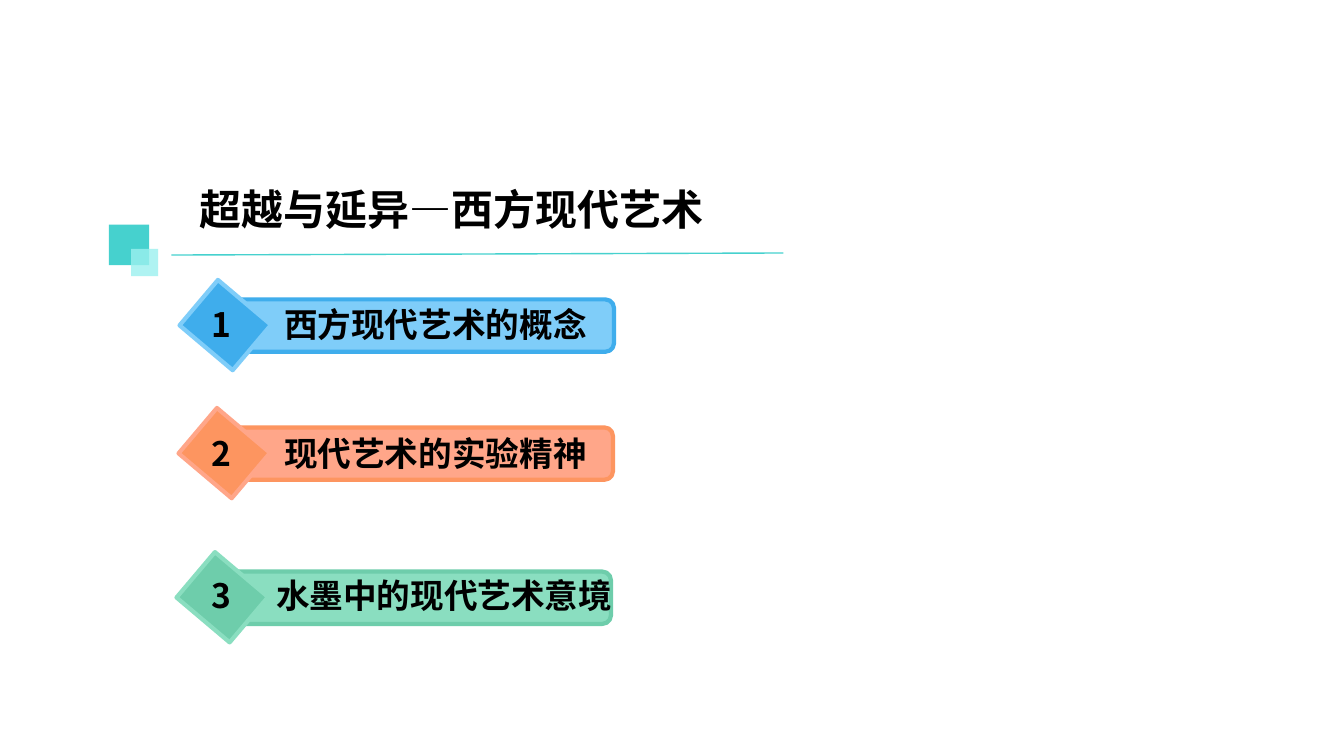
"""Build the agenda slide on modern Western art."""
from dataclasses import dataclass

from lxml import etree
from pptx import Presentation
from pptx import util as u
from pptx.dml.color import RGBColor
from pptx.enum import shapes, text
from pptx.oxml.ns import qn


@dataclass(frozen=True)
class Theme:
    font: str = "Noto Sans CJK SC"
    ink: str = "000000"
    teal: str = "46D1CE"
    pale: str = "9BF1EF"
    blue: tuple = ("7FCDF9", "3FADEC")
    coral: tuple = ("FFA689", "FD9560")
    green: tuple = ("8ADEC0", "6ECDAB")
    head: int = 30
    body: int = 24
    thin: int = 1
    edge: int = 3


class Deck:
    def __init__(self, theme):
        self.theme = theme
        self.prs = Presentation()
        self.prs.slide_width = u.Inches(13.33)
        self.prs.slide_height = u.Inches(7.5)
        self.slide = self.prs.slides.add_slide(self.prs.slide_layouts[5])

    def place(self, item, box):
        item.left, item.top, item.width, item.height = map(u.Inches, box)

    def letter(self, frame, words, size, tab=None):
        frame.word_wrap = True
        frame.auto_size = text.MSO_AUTO_SIZE.NONE
        frame.vertical_anchor = text.MSO_ANCHOR.TOP
        frame.text = words
        para = frame.paragraphs[0]
        para.alignment = text.PP_ALIGN.LEFT
        if tab:
            tabs = etree.SubElement(para._p.get_or_add_pPr(), qn("a:tabLst"))
            etree.SubElement(tabs, qn("a:tab"), pos=str(u.Inches(tab)), algn="l")
        for run in para.runs:
            font = run.font
            font.name, font.size, font.bold = self.theme.font, u.Pt(size), True
            font.color.rgb = RGBColor.from_string(self.theme.ink)
            east = etree.Element(qn("a:ea"), typeface=self.theme.font)
            font._element.find(qn("a:latin")).addnext(east)

    def title(self, words, box):
        item = self.slide.shapes.title
        self.place(item, box)
        self.letter(item.text_frame, words, self.theme.head)

    def label(self, words, box, tab):
        item = self.slide.shapes.add_textbox(*map(u.Inches, box))
        self.letter(item.text_frame, words, self.theme.body, tab)

    def block(self, group, kind, box, fill, line=None, alpha=None, turn=0):
        item = group.shapes.add_shape(kind, *map(u.Inches, box))
        item.shadow.inherit = False
        item.rotation = turn
        item.fill.solid()
        item.fill.fore_color.rgb = RGBColor.from_string(fill)
        if alpha:
            color = item._element.spPr.find(".//" + qn("a:srgbClr"))
            etree.SubElement(color, qn("a:alpha"), val=str(alpha * 1000))
        if line:
            item.line.color.rgb = RGBColor.from_string(line)
            item.line.width = u.Pt(self.theme.edge)
        else:
            item.line.fill.background()

    def rule(self, start, end):
        line = self.slide.shapes.add_connector(
            shapes.MSO_CONNECTOR.STRAIGHT, *map(u.Inches, start + end))
        line.line.color.rgb = RGBColor.from_string(self.theme.teal)
        line.line.width = u.Pt(self.theme.thin)
        etree.SubElement(line._element.spPr, qn("a:effectLst"))

    def mark(self):
        group = self.slide.shapes.add_group_shape()
        kind = shapes.MSO_SHAPE.RECTANGLE
        self.block(group, kind, (1.08, 2.23, 0.4, 0.4), self.theme.teal)
        self.block(group, kind, (1.3, 2.47, 0.27, 0.27), self.theme.pale, alpha=80)

    def entry(self, words, left, top, base, pair, tab):
        light, dark = pair
        group = self.slide.shapes.add_group_shape()
        self.block(group, shapes.MSO_SHAPE.ROUNDED_RECTANGLE,
                   (left, top, 3.95, 0.52), light, dark)
        self.block(group, shapes.MSO_SHAPE.RECTANGLE,
                   (left - 0.2, top - 0.09, 0.59, 0.69), dark, light, turn=310.2)
        self.label(words, (2, base, 5.16, 0.5), tab)


def main():
    theme = Theme()
    deck = Deck(theme)
    deck.rule((1.7, 2.53), (7.77, 2.51))
    deck.mark()
    deck.title("超越与延异—西方现代艺术", (1.88, 1.77, 5.94, 0.61))
    rows = (
        ("1\t西方现代艺术的概念", 2.14, 2.97, 2.97, theme.blue, 0.72),
        ("2\t现代艺术的实验精神", 2.13, 4.24, 4.25, theme.coral, 0.72),
        ("3\t水墨中的现代艺术意境", 2.11, 5.67, 5.65, theme.green, 0.64),
    )
    for row in rows:
        deck.entry(*row)
    deck.prs.save("out.pptx")


if __name__ == "__main__":
    main()
